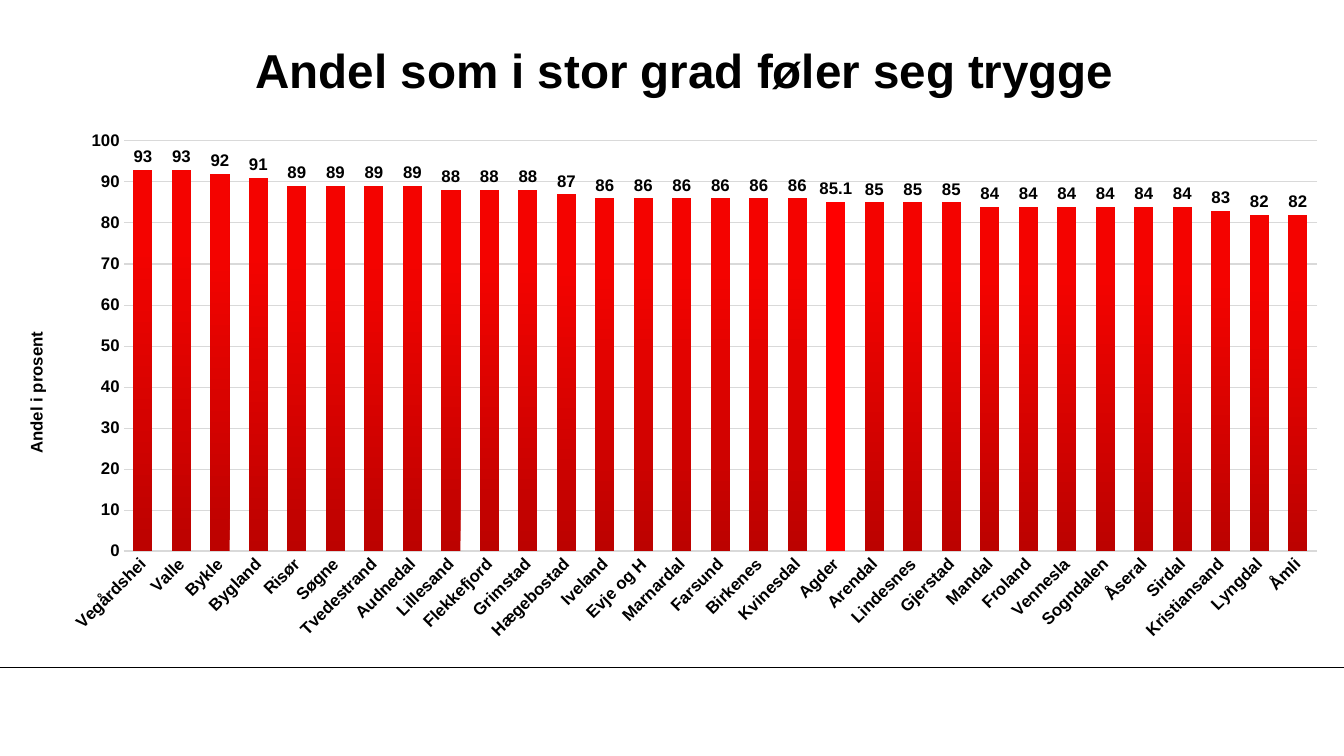
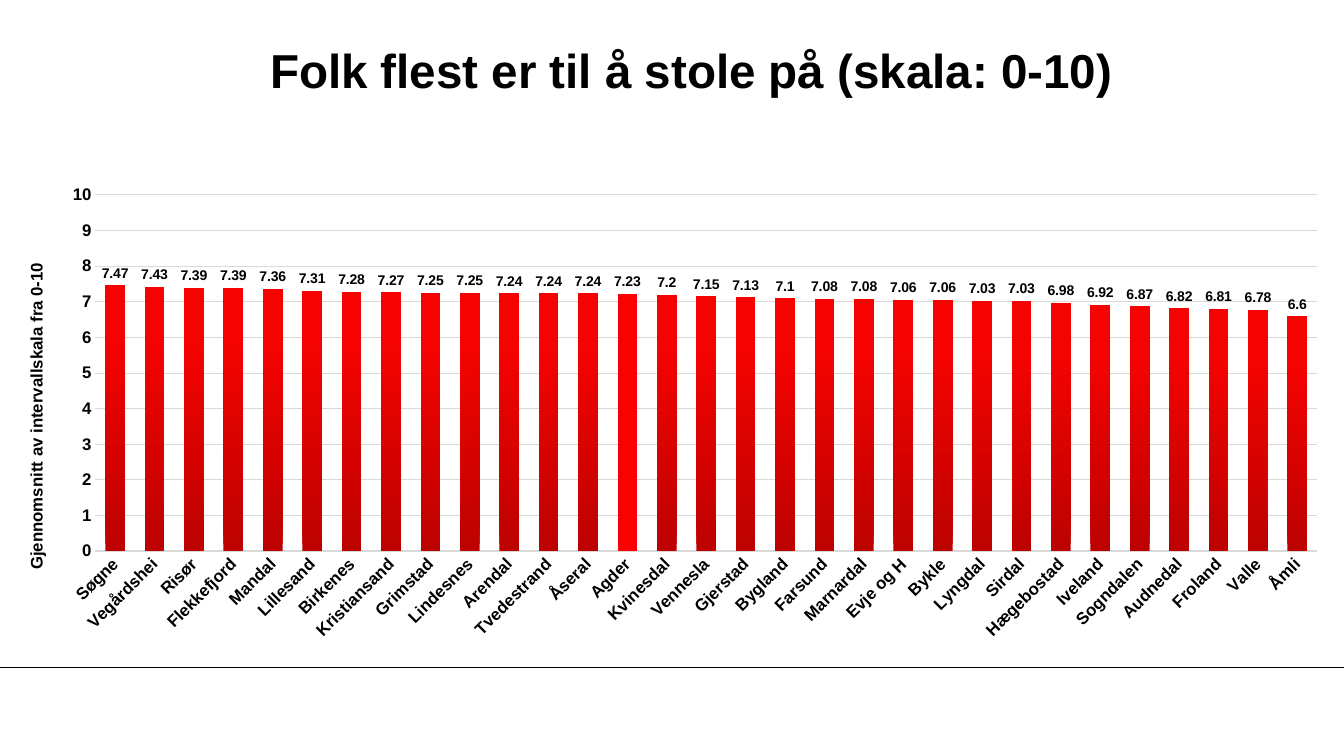
from dataclasses import dataclass

from lxml.etree import SubElement
from pptx import Presentation
from pptx.chart.chart import Chart
from pptx.chart.data import CategoryChartData
from pptx.dml.color import RGBColor
from pptx.enum.chart import XL_CHART_TYPE, XL_LABEL_POSITION, XL_TICK_MARK
from pptx.enum.shapes import MSO_CONNECTOR
from pptx.enum.text import MSO_ANCHOR, PP_ALIGN
from pptx.oxml import parse_xml
from pptx.oxml.ns import nsdecls, qn
from pptx.slide import Slide
from pptx.text.text import Font, TextFrame
from pptx.util import Cm, Pt


@dataclass(frozen=True)
class Theme:
    font: str = "Arial"
    ink: RGBColor = RGBColor(0x00, 0x00, 0x00)
    grid: RGBColor = RGBColor(0xD9, 0xD9, 0xD9)
    column_foot: RGBColor = RGBColor(0xBC, 0x02, 0x00)
    column_top: RGBColor = RGBColor(0xF4, 0x03, 0x00)
    highlight: RGBColor = RGBColor(0xFF, 0x00, 0x00)
    title_size: int = 34
    axis_size: int = 12
    base_size: int = 10


@dataclass(frozen=True)
class Survey:
    title: str
    axis_title: str
    axis_title_top: float
    scale_max: int
    scale_step: int
    label_size: int
    plot_left: float
    plot_top: float
    results: dict[str, float]


THEME = Theme()
SLIDE_WIDTH, SLIDE_HEIGHT = Cm(33.87), Cm(19.05)
REGION = "Agder"
PLOT_RIGHT, PLOT_BOTTOM = 0.98, 0.81

SURVEYS = (
    Survey(
        title="Andel som i stor grad føler seg trygge ",
        axis_title="Andel i prosent",
        axis_title_top=0.39,
        scale_max=100,
        scale_step=10,
        label_size=12,
        plot_left=0.092,
        plot_top=0.036,
        results={
            "Vegårdshei": 93, "Valle": 93, "Bykle": 92, "Bygland": 91,
            "Risør": 89, "Søgne": 89, "Tvedestrand": 89, "Audnedal": 89,
            "Lillesand": 88, "Flekkefjord": 88, "Grimstad": 88, "Hægebostad": 87,
            "Iveland": 86, "Evje og H": 86, "Marnardal": 86, "Farsund": 86,
            "Birkenes": 86, "Kvinesdal": 86, "Agder": 85.1, "Arendal": 85,
            "Lindesnes": 85, "Gjerstad": 85, "Mandal": 84, "Froland": 84,
            "Vennesla": 84, "Sogndalen": 84, "Åseral": 84, "Sirdal": 84,
            "Kristiansand": 83, "Lyngdal": 82, "Åmli": 82,
        },
    ),
    Survey(
        title="Folk flest er til å stole på (skala: 0-10)",
        axis_title="Gjennomsnitt av intervallskala fra 0-10",
        axis_title_top=0.26,
        scale_max=10,
        scale_step=1,
        label_size=10,
        plot_left=0.071,
        plot_top=0.138,
        results={
            "Søgne": 7.47, "Vegårdshei": 7.43, "Risør": 7.39, "Flekkefjord": 7.39,
            "Mandal": 7.36, "Lillesand": 7.31, "Birkenes": 7.28, "Kristiansand": 7.27,
            "Grimstad": 7.25, "Lindesnes": 7.25, "Arendal": 7.24, "Tvedestrand": 7.24,
            "Åseral": 7.24, "Agder": 7.23, "Kvinesdal": 7.2, "Vennesla": 7.15,
            "Gjerstad": 7.13, "Bygland": 7.1, "Farsund": 7.08, "Marnardal": 7.08,
            "Evje og H": 7.06, "Bykle": 7.06, "Lyngdal": 7.03, "Sirdal": 7.03,
            "Hægebostad": 6.98, "Iveland": 6.92, "Sogndalen": 6.87, "Audnedal": 6.82,
            "Froland": 6.81, "Valle": 6.78, "Åmli": 6.6,
        },
    ),
)


def style_font(font: Font, size: int, bold: bool = True) -> None:
    font.name = THEME.font
    font.size = Pt(size)
    font.bold = bold
    font.color.rgb = THEME.ink


def write_text(frame: TextFrame, text: str, *, size: int, bold: bool = True,
               align: PP_ALIGN = PP_ALIGN.CENTER) -> None:
    paragraph = frame.paragraphs[0]
    paragraph.alignment = align
    run = paragraph.add_run()
    run.text = text
    style_font(run.font, size, bold)


def add_title(slide: Slide, text: str) -> None:
    frame = slide.shapes.add_textbox(Cm(3.33), Cm(0.81), Cm(28.19), Cm(1.9)).text_frame
    frame.word_wrap = True
    frame.vertical_anchor = MSO_ANCHOR.MIDDLE
    frame.margin_left = frame.margin_right = frame.margin_top = frame.margin_bottom = 0
    write_text(frame, text, size=THEME.title_size)


def add_footer_rule(slide: Slide) -> None:
    height = Cm(16.81)
    rule = slide.shapes.add_connector(MSO_CONNECTOR.STRAIGHT, 0, height, SLIDE_WIDTH, height)
    rule.line.color.rgb = THEME.ink
    rule.line.width = Pt(0.75)
    SubElement(rule._element.spPr, qn("a:effectLst"))


def place_part(part, position: int, **settings: str | float) -> None:
    for old_layout in part.findall(qn("c:layout")):
        part.remove(old_layout)
    entries = "".join(f'<c:{tag} val="{value}"/>' for tag, value in settings.items())
    part.insert(position, parse_xml(
        f'<c:layout {nsdecls("c")}><c:manualLayout>{entries}</c:manualLayout></c:layout>'))


def style_axes(chart: Chart, survey: Survey) -> None:
    places, scale = chart.category_axis, chart.value_axis
    for axis in (places, scale):
        axis.major_tick_mark = axis.minor_tick_mark = XL_TICK_MARK.NONE
        style_font(axis.tick_labels.font, THEME.axis_size)
    places.format.line.color.rgb = THEME.grid
    places.format.line.width = Pt(1)
    places._element.find(qn("c:txPr")).find(qn("a:bodyPr")).set("rot", "-2700000")

    scale.minimum_scale, scale.maximum_scale = 0, survey.scale_max
    scale.major_unit = survey.scale_step
    scale.format.line.fill.background()
    scale.major_gridlines.format.line.color.rgb = THEME.grid
    scale.major_gridlines.format.line.width = Pt(0.75)
    scale.has_title = True
    caption = scale.axis_title
    write_text(caption.text_frame, survey.axis_title, size=THEME.axis_size)
    direction = caption._element.find(".//" + qn("a:bodyPr"))
    direction.set("rot", "-5400000")
    direction.set("vert", "horz")
    place_part(caption._element, 1, xMode="edge", yMode="edge",
               x=0.017, y=survey.axis_title_top)


def style_columns(chart: Chart, survey: Survey) -> None:
    plot = chart.plots[0]
    plot.vary_by_categories = False
    plot.gap_width, plot.overlap = 100, -24
    columns = plot.series[0]
    columns.invert_if_negative = False
    fill = columns.format.fill
    fill.gradient()
    fill.gradient_angle = 90
    shades = ((0, THEME.column_foot), (0.8, THEME.column_top))
    for stop, (position, color) in zip(fill.gradient_stops, shades):
        stop.position = position
        stop.color.rgb = color
    region_fill = columns.points[list(survey.results).index(REGION)].format.fill
    region_fill.solid()
    region_fill.fore_color.rgb = THEME.highlight

    plot.has_data_labels = True
    labels = plot.data_labels
    labels.show_value = True
    labels.position = XL_LABEL_POSITION.OUTSIDE_END
    style_font(labels.font, survey.label_size)


def add_survey_chart(slide: Slide, survey: Survey) -> None:
    answers = CategoryChartData()
    answers.categories = list(survey.results)
    answers.add_series("Series 1", list(survey.results.values()))
    chart = slide.shapes.add_chart(XL_CHART_TYPE.COLUMN_CLUSTERED, 0, Cm(3.07),
                                   SLIDE_WIDTH, Cm(13.36), answers).chart
    chart.has_legend = False
    chart.has_title = False
    style_font(chart.font, THEME.base_size, bold=False)
    style_axes(chart, survey)
    style_columns(chart, survey)
    place_part(chart._chartSpace.find(".//" + qn("c:plotArea")), 0,
               layoutTarget="inner", xMode="edge", yMode="edge",
               x=survey.plot_left, y=survey.plot_top,
               w=round(PLOT_RIGHT - survey.plot_left, 3),
               h=round(PLOT_BOTTOM - survey.plot_top, 3))


def main() -> None:
    deck = Presentation()
    deck.slide_width, deck.slide_height = SLIDE_WIDTH, SLIDE_HEIGHT
    for survey in SURVEYS:
        slide = deck.slides.add_slide(deck.slide_layouts[6])
        add_footer_rule(slide)
        add_title(slide, survey.title)
        add_survey_chart(slide, survey)
    deck.save("out.pptx")


if __name__ == "__main__":
    main()
